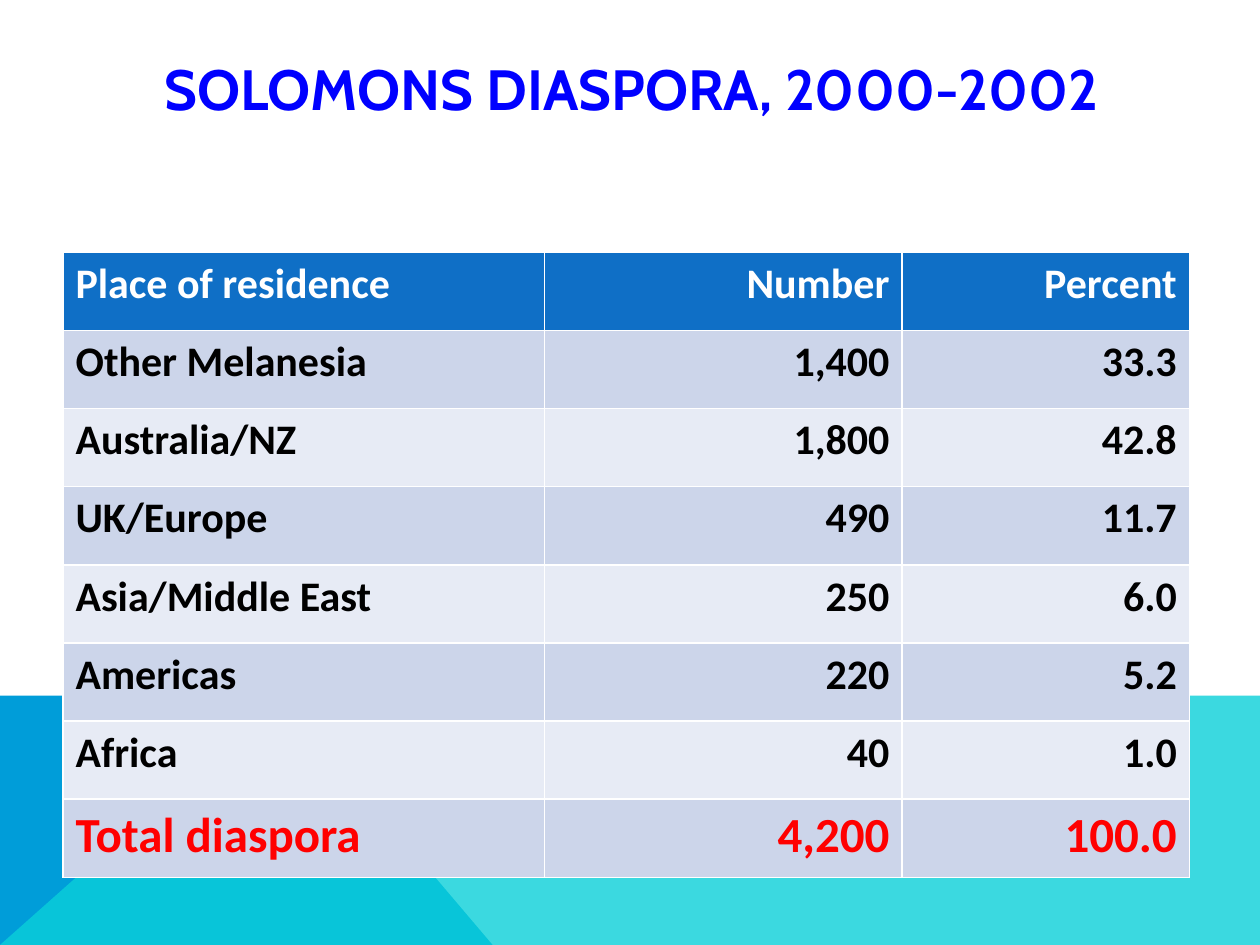
import lxml.etree
import pptx
import pptx.dml.color
import pptx.enum.text
import pptx.oxml
import pptx.oxml.ns
import pptx.util

WIDTH, HEIGHT = pptx.util.Inches(10), pptx.util.Inches(7.5)
ALIGN = pptx.enum.text.PP_ALIGN
ANCHOR = pptx.enum.text.MSO_ANCHOR

# Shares of the slide's size
BAND_TOP = 0.736
BAND_SPLIT = 0.223
WEDGE_RIGHT = 0.391
TITLE_BOX = (0.09, 0.053, 0.822, 0.08)
TABLE_LEFT, TABLE_TOP = 0.05, 0.267
COLUMN_SHARES = (0.382, 0.284, 0.228)
ROW_SHARE = 0.0827

HEADER_FILL = "0F6FC6"
BAND_FILLS = ("CCD5EA", "E7EBF5")
ROWS = [
    ("Place of residence", "Number", "Percent"),
    ("Other Melanesia", "1,400", "33.3"),
    ("Australia/NZ", "1,800", "42.8"),
    ("UK/Europe", "490", "11.7"),
    ("Asia/Middle East", "250", "6.0"),
    ("Americas", "220", "5.2"),
    ("Africa", "40", "1.0"),
    ("Total diaspora", "4,200", "100.0"),
]

TITLE_FORMAT = {"name": "Cabin", "size": pptx.util.Pt(32.4), "bold": True}
BODY_FORMAT = {"name": "Calibri", "size": pptx.util.Pt(24), "bold": True}
TOTAL_FORMAT = {**BODY_FORMAT, "size": pptx.util.Pt(28)}


def across(share):
    return round(WIDTH * share)


def down(share):
    return round(HEIGHT * share)


def set_color(color_format, hex_color):
    color_format.rgb = pptx.dml.color.RGBColor.from_string(hex_color)


def set_fill(fill, hex_color):
    fill.solid()
    set_color(fill.fore_color, hex_color)


def write_text(paragraph, text, font_format, hex_color, alignment):
    paragraph.alignment = alignment
    run = paragraph.add_run()
    run.text = text
    for attribute, value in font_format.items():
        setattr(run.font, attribute, value)
    set_color(run.font.color, hex_color)


def add_polygon(slide, shares, hex_color, opacity=100):
    points = [(across(x), down(y)) for x, y in shares]
    builder = slide.shapes.build_freeform(*points[0])
    builder.add_line_segments(points[1:], close=True)
    shape = builder.convert_to_shape()
    shape.shadow.inherit = False
    set_fill(shape.fill, hex_color)
    shape.line.fill.background()
    if opacity < 100:
        color = shape.element.spPr.find(".//" + pptx.oxml.ns.qn("a:srgbClr"))
        alpha = lxml.etree.SubElement(color, pptx.oxml.ns.qn("a:alpha"))
        alpha.set("val", str(opacity * 1000))


def add_title(slide, text):
    left, top, width, height = TITLE_BOX
    box = slide.shapes.add_textbox(
        across(left), down(top), across(width), down(height))
    frame = box.text_frame
    frame.word_wrap = True
    frame.vertical_anchor = ANCHOR.MIDDLE
    write_text(frame.paragraphs[0], text, TITLE_FORMAT, "0000FF", ALIGN.CENTER)


def set_borders(cell, hex_color, points):
    properties = cell._tc.get_or_add_tcPr()
    for position, side in enumerate(("lnL", "lnR", "lnT", "lnB")):
        border = pptx.oxml.parse_xml(
            f'<a:{side} {pptx.oxml.ns.nsdecls("a")} w="{pptx.util.Pt(points)}">'
            f'<a:solidFill><a:srgbClr val="{hex_color}"/></a:solidFill></a:{side}>')
        properties.insert(position, border)


def row_style(index):
    """Return the fill, text colour and font format of a row."""
    if index == 0:
        return HEADER_FILL, "FFFFFF", BODY_FORMAT
    fill = BAND_FILLS[(index - 1) % 2]
    if index == len(ROWS) - 1:
        return fill, "FF0000", TOTAL_FORMAT
    return fill, "000000", BODY_FORMAT


def add_residence_table(slide):
    table = slide.shapes.add_table(
        len(ROWS), len(COLUMN_SHARES), across(TABLE_LEFT), down(TABLE_TOP),
        across(sum(COLUMN_SHARES)), down(ROW_SHARE * len(ROWS))).table
    for column, share in zip(table.columns, COLUMN_SHARES):
        column.width = across(share)
    for row_index, texts in enumerate(ROWS):
        table.rows[row_index].height = down(ROW_SHARE)
        fill, text_color, font_format = row_style(row_index)
        for column_index, text in enumerate(texts):
            cell = table.cell(row_index, column_index)
            set_fill(cell.fill, fill)
            set_borders(cell, "FFFFFF", 1)
            alignment = ALIGN.RIGHT if column_index else ALIGN.LEFT
            write_text(cell.text_frame.paragraphs[0], text, font_format,
                       text_color, alignment)


def main():
    presentation = pptx.Presentation()
    presentation.slide_width, presentation.slide_height = WIDTH, HEIGHT
    slide = presentation.slides.add_slide(presentation.slide_layouts[6])

    # Coloured band along the bottom
    add_polygon(slide, [(0, 1), (0, BAND_TOP), (BAND_SPLIT, BAND_TOP),
                        (WEDGE_RIGHT, 1)], "009DD9")
    add_polygon(slide, [(0, 1), (BAND_SPLIT, BAND_TOP), (1, BAND_TOP),
                        (1, 1)], "0BD0D9", opacity=80)

    # Title and table
    add_title(slide, "SOLOMONS DIASPORA, 2000-2002")
    add_residence_table(slide)

    presentation.save("out.pptx")


if __name__ == "__main__":
    main()
